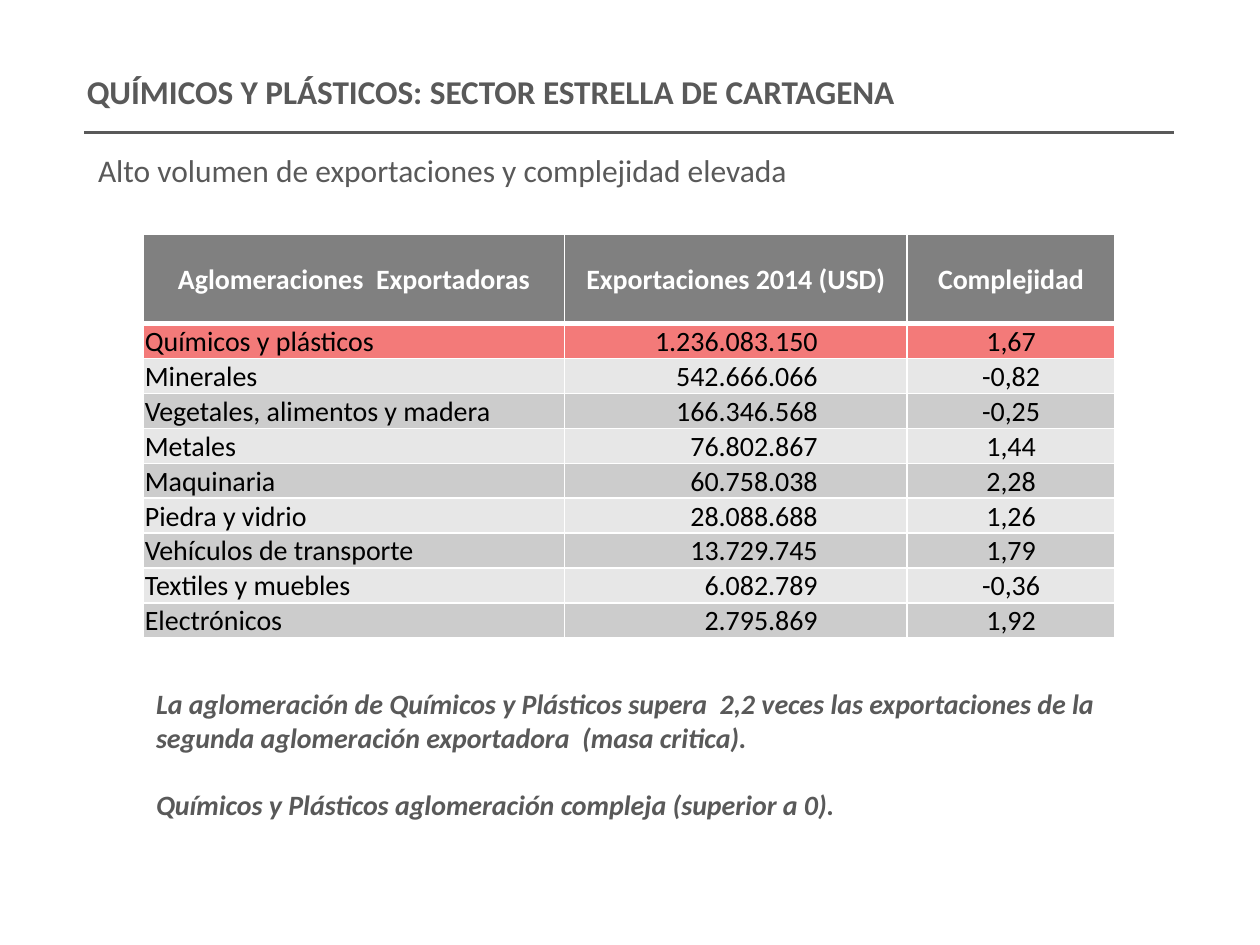
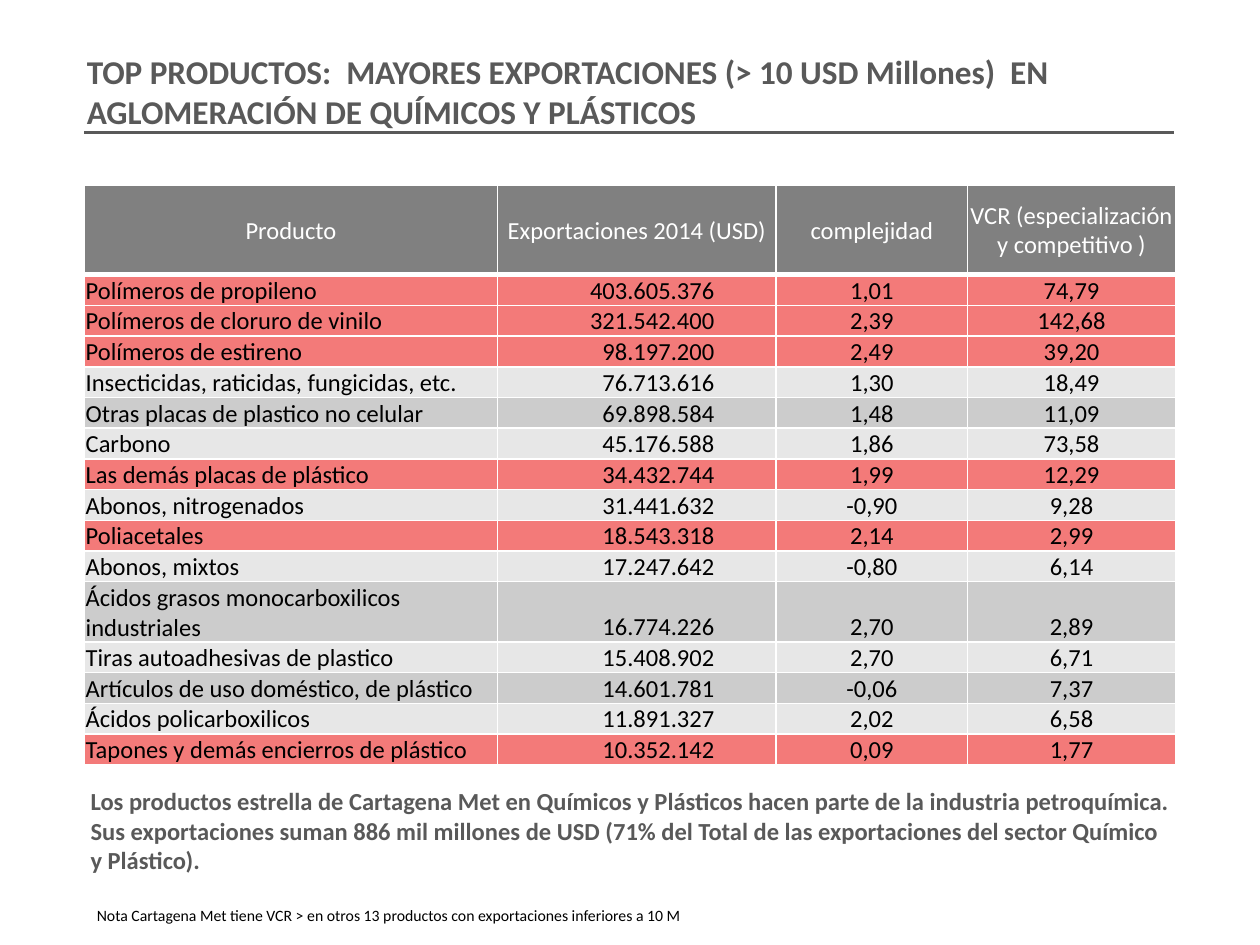
from dataclasses import dataclass

from lxml import etree
from pptx import Presentation
from pptx.dml.color import RGBColor
from pptx.enum.shapes import MSO_CONNECTOR
from pptx.enum.text import MSO_ANCHOR, PP_ALIGN
from pptx.oxml.ns import qn
from pptx.slide import Slide
from pptx.table import _Cell
from pptx.text.text import TextFrame
from pptx.util import Inches, Pt

LEFT, CENTER, RIGHT = PP_ALIGN.LEFT, PP_ALIGN.CENTER, PP_ALIGN.RIGHT
JUSTIFY = PP_ALIGN.JUSTIFY
MIDDLE, BOTTOM = MSO_ANCHOR.MIDDLE, MSO_ANCHOR.BOTTOM
STRAIGHT = MSO_CONNECTOR.STRAIGHT

FONT = "Calibri"
WHITE = RGBColor(0xFF, 0xFF, 0xFF)
BLACK = RGBColor(0x00, 0x00, 0x00)
DARK_GRAY = RGBColor(0x59, 0x59, 0x59)
HEADER_GRAY = RGBColor(0x80, 0x80, 0x80)
LIGHT_BAND = RGBColor(0xE7, 0xE7, 0xE7)
DARK_BAND = RGBColor(0xCC, 0xCC, 0xCC)
HIGHLIGHT = RGBColor(0xF3, 0x7A, 0x79)

BLANK_LAYOUT = 6
HEADER_HEIGHT = 0.71
THIN, THICK = 1, 3


@dataclass(frozen=True)
class ExportTable:
    left: float
    top: float
    widths: tuple[float, ...]
    row_height: float
    size: int
    header_bold: bool
    amount_indent: float  # right margin of the export amounts
    highlighted: frozenset[int]
    header: tuple[str, ...]
    rows: tuple[tuple[str, ...], ...]


CLUSTERS = ExportTable(
    left=1.14, top=1.86, widths=(3.34, 2.72, 1.65), row_height=0.27, size=16,
    header_bold=True, amount_indent=0.71, highlighted=frozenset({0}),
    header=("Aglomeraciones  Exportadoras", "Exportaciones 2014 (USD)", "Complejidad"),
    rows=(
        ("Químicos y plásticos", "1.236.083.150", "1,67"),
        ("Minerales", "542.666.066", "-0,82"),
        ("Vegetales, alimentos y madera", "166.346.568", "-0,25"),
        ("Metales", "76.802.867", "1,44"),
        ("Maquinaria", "60.758.038", "2,28"),
        ("Piedra y vidrio", "28.088.688", "1,26"),
        ("Vehículos de transporte", "13.729.745", "1,79"),
        ("Textiles y muebles", "6.082.789", "-0,36"),
        ("Electrónicos", "2.795.869", "1,92"),
    ),
)

PRODUCTS = ExportTable(
    left=0.67, top=1.47, widths=(3.28, 2.21, 1.52, 1.65), row_height=0.24, size=14,
    header_bold=False, amount_indent=0.49, highlighted=frozenset({0, 1, 2, 6, 8, 14}),
    header=("Producto", "Exportaciones 2014 (USD)", "complejidad",
            "VCR (especialización y competitivo )"),
    rows=(
        ("Polímeros de propileno", "403.605.376", "1,01", "74,79"),
        ("Polímeros de cloruro de vinilo", "321.542.400", "2,39", "142,68"),
        ("Polímeros de estireno", "98.197.200", "2,49", "39,20"),
        ("Insecticidas, raticidas, fungicidas, etc.", "76.713.616", "1,30", "18,49"),
        ("Otras placas de plastico no celular", "69.898.584", "1,48", "11,09"),
        ("Carbono", "45.176.588", "1,86", "73,58"),
        ("Las demás placas de plástico", "34.432.744", "1,99", "12,29"),
        ("Abonos, nitrogenados", "31.441.632", "-0,90", "9,28"),
        ("Poliacetales", "18.543.318", "2,14", "2,99"),
        ("Abonos, mixtos", "17.247.642", "-0,80", "6,14"),
        ("Ácidos grasos monocarboxilicos industriales", "16.774.226", "2,70", "2,89"),
        ("Tiras autoadhesivas de plastico", "15.408.902", "2,70", "6,71"),
        ("Artículos de uso doméstico, de plástico", "14.601.781", "-0,06", "7,37"),
        ("Ácidos policarboxilicos", "11.891.327", "2,02", "6,58"),
        ("Tapones y demás encierros de plástico", "10.352.142", "0,09", "1,77"),
    ),
)


def write_text(frame: TextFrame, text: str, *, size: float, color: RGBColor = DARK_GRAY,
               bold: bool = False, italic: bool = False, align: PP_ALIGN = LEFT,
               gap: float = 0) -> None:
    """Write one paragraph per line of text, with a gap in points between them."""
    for index, line in enumerate(text.split("\n")):
        paragraph = frame.add_paragraph() if index else frame.paragraphs[0]
        paragraph.alignment = align
        if index:
            paragraph.space_before = Pt(gap)
        run = paragraph.add_run()
        run.text = line
        run.font.name, run.font.size = FONT, Pt(size)
        run.font.bold, run.font.italic = bold, italic
        run.font.color.rgb = color


def add_text(slide: Slide, text: str, left: float, top: float, width: float,
             height: float, **text_format) -> None:
    box = slide.shapes.add_textbox(Inches(left), Inches(top), Inches(width), Inches(height))
    box.text_frame.word_wrap = True
    write_text(box.text_frame, text, **text_format)


def add_heading(slide: Slide, title: str, top: float) -> None:
    """Draw the title and the rule below it."""
    rule = slide.shapes.add_connector(
        STRAIGHT, Inches(0.67), Inches(1.05), Inches(9.32), Inches(1.05))
    rule.line.color.rgb, rule.line.width = DARK_GRAY, Pt(2)
    etree.SubElement(rule._element.spPr, qn("a:effectLst"))
    add_text(slide, title, 0.59, top, 8.58, 0.39, size=19, bold=True)


def set_borders(cell: _Cell, top: float, bottom: float) -> None:
    properties = cell._tc.get_or_add_tcPr()
    for side, width in (("L", THIN), ("R", THIN), ("T", top), ("B", bottom)):
        line = etree.SubElement(properties, qn(f"a:ln{side}"), w=str(Pt(width)))
        fill = etree.SubElement(line, qn("a:solidFill"))
        etree.SubElement(fill, qn("a:srgbClr"), val=str(WHITE))


def format_cell(cell: _Cell, fill: RGBColor, anchor: MSO_ANCHOR,
                top: float = THIN, bottom: float = THIN) -> None:
    set_borders(cell, top, bottom)
    cell.fill.solid()
    cell.fill.fore_color.rgb = fill
    cell.vertical_anchor = anchor
    cell.margin_left = cell.margin_right = cell.margin_top = Inches(0.01)
    cell.margin_bottom = 0


def add_export_table(slide: Slide, content: ExportTable) -> None:
    height = HEADER_HEIGHT + content.row_height * len(content.rows)
    table = slide.shapes.add_table(
        len(content.rows) + 1, len(content.widths), Inches(content.left),
        Inches(content.top), Inches(sum(content.widths)), Inches(height)).table
    table.first_row = table.horz_banding = False
    for column, width in zip(table.columns, content.widths):
        column.width = Inches(width)

    # Header row
    table.rows[0].height = Inches(HEADER_HEIGHT)
    for cell, label in zip(table.rows[0].cells, content.header):
        format_cell(cell, HEADER_GRAY, MIDDLE, bottom=THICK)
        write_text(cell.text_frame, label, size=content.size, color=WHITE,
                   bold=content.header_bold, align=CENTER)

    # Data rows: names left, amounts right, indexes centred
    for index, values in enumerate(content.rows):
        row = table.rows[index + 1]
        row.height = Inches(content.row_height)
        band = LIGHT_BAND if index % 2 else DARK_BAND
        fill = HIGHLIGHT if index in content.highlighted else band
        for column, (cell, value) in enumerate(zip(row.cells, values)):
            format_cell(cell, fill, BOTTOM, top=THIN if index else THICK)
            if column == 1:
                cell.margin_right = Inches(content.amount_indent)
            align = (LEFT, RIGHT, CENTER, CENTER)[column]
            write_text(cell.text_frame, value, size=content.size, color=BLACK, align=align)


def build_clusters(slide: Slide) -> None:
    add_heading(slide, "QUÍMICOS Y PLÁSTICOS: SECTOR ESTRELLA DE CARTAGENA", 0.52)
    add_text(slide, "Alto volumen de exportaciones y complejidad elevada",
             0.68, 1.15, 8.66, 0.4, size=18, align=JUSTIFY)
    add_export_table(slide, CLUSTERS)
    add_text(slide,
             "La aglomeración de Químicos y Plásticos supera  2,2 veces las exportaciones "
             "de la segunda aglomeración exportadora  (masa critica).\n"
             "Químicos y Plásticos aglomeración compleja (superior a 0).",
             1.14, 5.4, 7.8, 1.45, size=16, bold=True, italic=True, gap=19.5)


def build_products(slide: Slide) -> None:
    add_heading(slide,
                "TOP PRODUCTOS:  MAYORES EXPORTACIONES (> 10 USD Millones)  EN "
                "AGLOMERACIÓN DE QUÍMICOS Y PLÁSTICOS", 0.36)
    add_export_table(slide, PRODUCTS)
    add_text(slide,
             "Los productos estrella de Cartagena Met en Químicos y Plásticos hacen parte de "
             "la industria petroquímica. Sus exportaciones suman 886 mil millones de USD (71% "
             "del Total de las exportaciones del sector Químico y Plástico).",
             0.62, 6.19, 8.79, 1.08, size=14, bold=True)
    add_text(slide,
             "Nota Cartagena Met tiene VCR > en otros 13 productos con exportaciones "
             "inferiores a 10 M", 0.67, 7.14, 8.9, 0.25, size=9, color=BLACK)


def main() -> None:
    presentation = Presentation()
    presentation.slide_width, presentation.slide_height = Inches(10), Inches(7.5)
    for build in (build_clusters, build_products):
        build(presentation.slides.add_slide(presentation.slide_layouts[BLANK_LAYOUT]))
    presentation.save("out.pptx")


if __name__ == "__main__":
    main()
